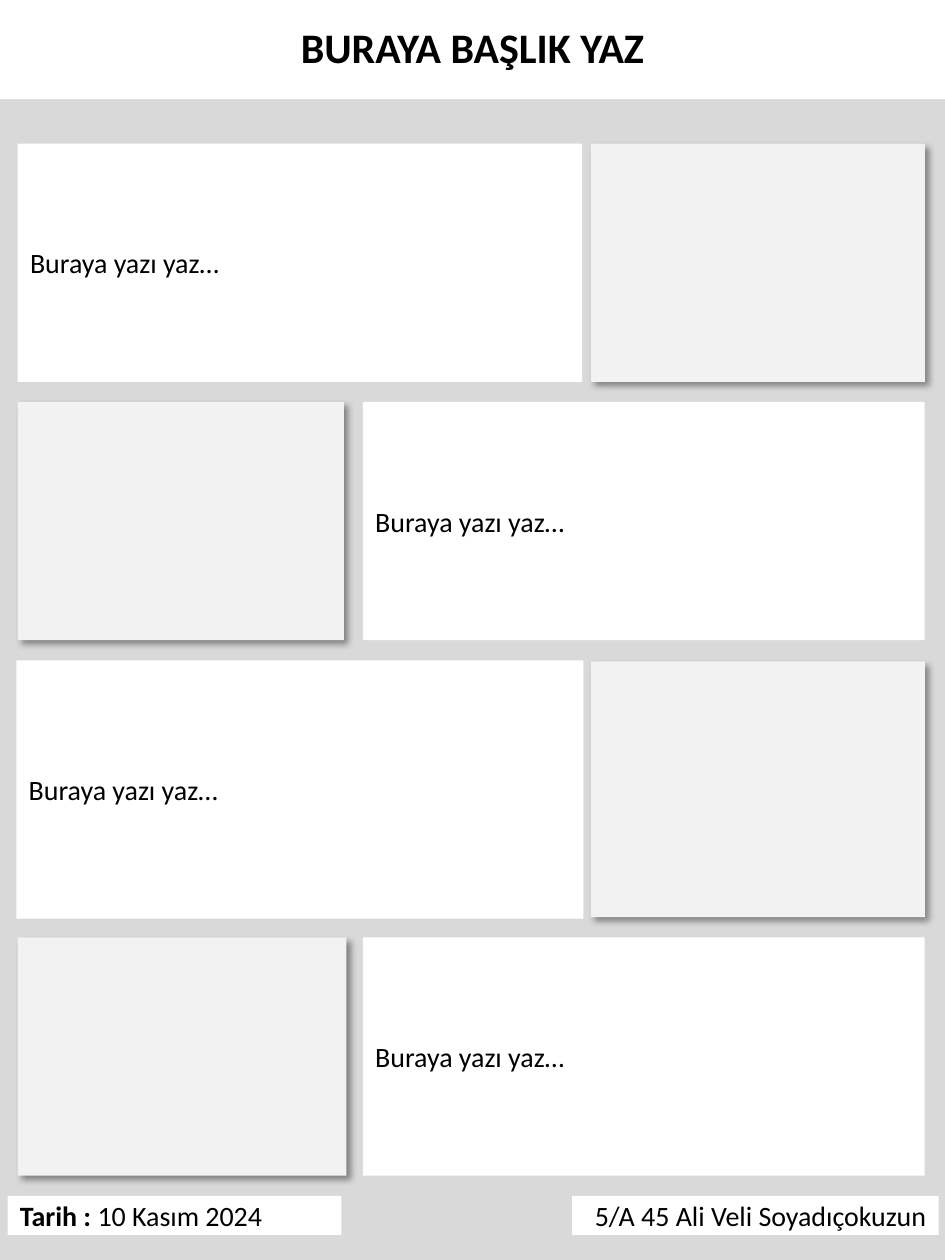
from dataclasses import dataclass

import pptx
import pptx.util
import pptx.dml.color
import pptx.enum.shapes
import pptx.enum.text
import pptx.oxml
import pptx.oxml.ns

Inches = pptx.util.Inches
ALIGN = pptx.enum.text.PP_ALIGN


@dataclass(frozen=True)
class Theme:
    background: str = "D9D9D9"
    panel: str = "FFFFFF"
    photo: str = "F2F2F2"
    text: str = "000000"
    shadow: str = "000000"
    font: str = "Calibri"
    title_size: int = 24
    body_size: int = 16


THEME = Theme()

PROMPT = "Buraya yazı yaz…"
# Each row: text box, photo box as (left, top, width, height)
ROWS = [
    ((0.14, 1.14, 4.48, 1.89), (4.69, 1.14, 2.65, 1.89)),
    ((2.88, 3.19, 4.46, 1.89), (0.14, 3.19, 2.59, 1.89)),
    ((0.13, 5.24, 4.5, 2.05), (4.69, 5.25, 2.65, 2.03)),
    ((2.88, 7.44, 4.46, 1.89), (0.14, 7.44, 2.61, 1.89)),
]


def rgb(value):
    return pptx.dml.color.RGBColor.from_string(value)


def paint(fill, color):
    fill.solid()
    fill.fore_color.rgb = rgb(color)


def add_box(slide, box, color):
    sp = slide.shapes.add_shape(
        pptx.enum.shapes.MSO_SHAPE.RECTANGLE, *map(Inches, box))
    paint(sp.fill, color)
    sp.line.fill.background()
    sp.shadow.inherit = False
    return sp


def write(sp, runs, size, align):
    """Fill a shape with one paragraph of (text, bold) runs."""
    tf = sp.text_frame
    frame_format = {"word_wrap": True,
                    "vertical_anchor": pptx.enum.text.MSO_ANCHOR.MIDDLE}
    for name, value in frame_format.items():
        setattr(tf, name, value)
    p = tf.paragraphs[0]
    p.alignment = align
    for text, bold in runs:
        r = p.add_run()
        r.text = text
        font_format = {"name": THEME.font, "size": pptx.util.Pt(size),
                       "bold": bold}
        for name, value in font_format.items():
            setattr(r.font, name, value)
        r.font.color.rgb = rgb(THEME.text)


def add_title(slide, box, text):
    sp = slide.shapes.title
    sp.left, sp.top, sp.width, sp.height = map(Inches, box)
    paint(sp.fill, THEME.panel)
    write(sp, [(text, True)], THEME.title_size, ALIGN.CENTER)
    sp.text_frame.auto_size = pptx.enum.text.MSO_AUTO_SIZE.SHAPE_TO_FIT_TEXT


def add_text_panel(slide, box, runs, align=ALIGN.LEFT):
    sp = add_box(slide, box, THEME.panel)
    write(sp, runs, THEME.body_size, align)


def add_photo_panel(slide, box):
    """Place an empty photo area with a soft shadow to the lower right."""
    sp = add_box(slide, box, THEME.photo)
    effects = sp._element.spPr.find(pptx.oxml.ns.qn("a:effectLst"))
    effects.append(pptx.oxml.parse_xml(
        f'<a:outerShdw {pptx.oxml.ns.nsdecls("a")} '
        f'blurRad="{pptx.util.Pt(4)}" dist="{pptx.util.Pt(3)}" '
        f'dir="{45 * 60000}" algn="tl" rotWithShape="0">'
        f'<a:srgbClr val="{THEME.shadow}"><a:alpha val="40000"/></a:srgbClr>'
        '</a:outerShdw>'))


def main():
    prs = pptx.Presentation()
    prs.slide_width, prs.slide_height = Inches(7.5), Inches(10)
    slide = prs.slides.add_slide(prs.slide_layouts.get_by_name("Title Only"))
    paint(slide.background.fill, THEME.background)

    add_title(slide, (0, 0.12, 7.5, 0.5), "BURAYA BAŞLIK YAZ")
    for text_box, photo_box in ROWS:
        add_text_panel(slide, text_box, [(PROMPT, False)])
        add_photo_panel(slide, photo_box)
    add_text_panel(slide, (0.06, 9.49, 2.65, 0.31),
                   [("Tarih : ", True), ("10 Kasım 2024", False)])
    add_text_panel(slide, (4.54, 9.49, 2.91, 0.31),
                   [("5/A 45 Ali Veli Soyadıçokuzun", False)], ALIGN.RIGHT)
    prs.save("out.pptx")


if __name__ == "__main__":
    main()
